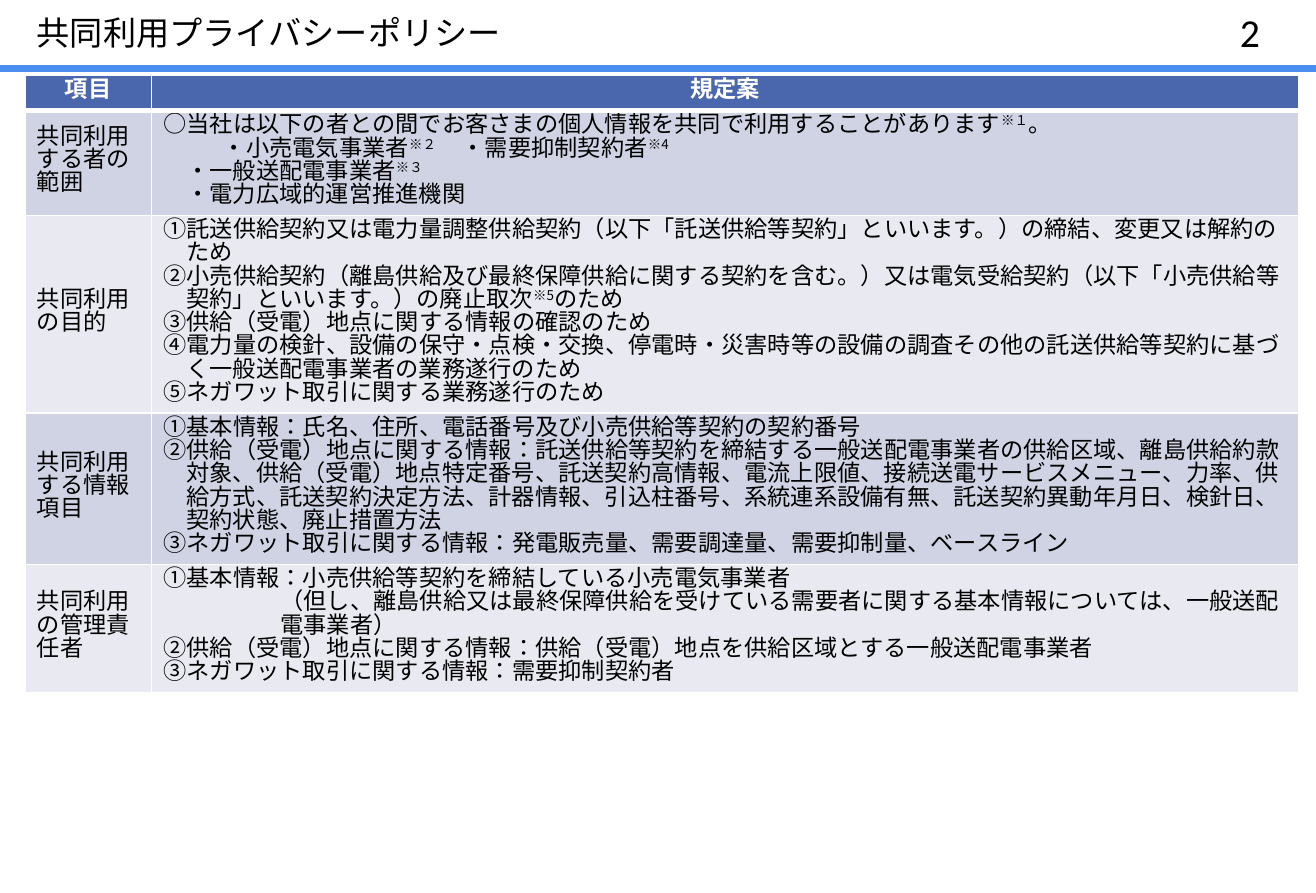
from lxml import etree
from pptx import Presentation
from pptx.dml.color import RGBColor
from pptx.enum.lang import MSO_LANGUAGE_ID
from pptx.enum.shapes import MSO_CONNECTOR, MSO_SHAPE
from pptx.enum.text import MSO_ANCHOR, PP_ALIGN
from pptx.oxml.ns import qn
from pptx.util import Cm, Pt

COLORS = {"rule": "4A8EF2", "header": "4A66AC", "odd": "D0D3E3",
          "even": "E9EAF1", "white": "FFFFFF", "black": "000000"}
JP = "Noto Sans CJK JP"
LINE = 14  # points per text line in the table
HANG = 0.49  # cm, one character


def rgb(name):
    return RGBColor.from_string(COLORS[name])


def write(p, text, size=14, font=JP, color="black", bold=False, align=PP_ALIGN.LEFT,
          spacing=Pt(LINE), left=0, first=0, tabs=()):
    """Fill a paragraph; text between ^ marks is superscript."""
    pPr = p._p.get_or_add_pPr()
    pPr.set("marL", str(Cm(left)))
    pPr.set("indent", str(Cm(first)))
    if tabs:
        tab_list = etree.SubElement(pPr, qn("a:tabLst"))
        for pos in tabs:
            etree.SubElement(tab_list, qn("a:tab"), pos=str(Cm(pos)), algn="l")
    p.alignment = align
    p.line_spacing = spacing
    for i, part in enumerate(text.split("^")):
        if not part:
            continue
        r = p.add_run()
        r.text = part
        r.font.size, r.font.bold, r.font.name = Pt(size), bold, font
        r.font.color.rgb = rgb(color)
        r.font.language_id = MSO_LANGUAGE_ID.JAPANESE
        rPr = r.font._element
        etree.SubElement(rPr, qn("a:ea"), typeface=font)
        if i % 2:
            rPr.set("baseline", "30000")


prs = Presentation()
prs.slide_width, prs.slide_height = Cm(28), Cm(19)
s = prs.slides.add_slide(prs.slide_layouts[6])

# Rule under the title
rule = s.shapes.add_connector(MSO_CONNECTOR.STRAIGHT, 0, Cm(1.45), Cm(28), Cm(1.45))
rule.line.color.rgb = rgb("rule")
rule.line.width = Pt(4.25)
etree.SubElement(rule._element.spPr, qn("a:effectLst"))

# Page number
sp = s.shapes.add_shape(MSO_SHAPE.RECTANGLE, Cm(25.25), Cm(0.03), Cm(2.69), Cm(1.3))
sp.shadow.inherit = False
sp.fill.background()
sp.line.color.rgb = rgb("white")
sp.line.width = Pt(0.5)
sp.text_frame.vertical_anchor = MSO_ANCHOR.MIDDLE
write(sp.text_frame.paragraphs[0], "2", size=23.9, font="Calibri",
      align=PP_ALIGN.CENTER, spacing=1.0)

# Title
tf = s.shapes.add_textbox(Cm(0.53), Cm(0.03), Cm(24.16), Cm(1.42)).text_frame
tf.word_wrap = True
tf.vertical_anchor = MSO_ANCHOR.MIDDLE
write(tf.paragraphs[0], "共同利用プライバシーポリシー", size=20, spacing=0.9)

# Table content: heading, number of text lines, paragraphs with their format
item = {"left": HANG, "first": -HANG}
bullet = {"left": HANG}
rows = [
    ("共同利用する者の範囲", 4, [
        ("○当社は以下の者との間でお客さまの個人情報を共同で利用することがあります^※１^。", {}),
        ("\t・小売電気事業者^※２^\t・需要抑制契約者^※4^", {"tabs": (HANG, 6.75)}),
        ("・一般送配電事業者^※３^", bullet),
        ("・電力広域的運営推進機関", bullet)]),
    ("共同利用の目的", 8, [
        ("①託送供給契約又は電力量調整供給契約（以下「託送供給等契約」といいます。）"
         "の締結、変更又は解約のため", item),
        ("②小売供給契約（離島供給及び最終保障供給に関する契約を含む。）又は電気受給契約"
         "（以下「小売供給等契約」といいます。）の廃止取次^※5^のため", item),
        ("③供給（受電）地点に関する情報の確認のため", item),
        ("④電力量の検針、設備の保守・点検・交換、停電時・災害時等の設備の調査その他の"
         "託送供給等契約に基づく一般送配電事業者の業務遂行のため", item),
        ("⑤ネガワット取引に関する業務遂行のため", item)]),
    ("共同利用する情報項目", 6, [
        ("①基本情報：氏名、住所、電話番号及び小売供給等契約の契約番号", item),
        ("②供給（受電）地点に関する情報：託送供給等契約を締結する一般送配電事業者の供給区域、"
         "離島供給約款対象、供給（受電）地点特定番号、託送契約高情報、電流上限値、"
         "接続送電サービスメニュー、力率、供給方式、託送契約決定方法、計器情報、引込柱番号、"
         "系統連系設備有無、託送契約異動年月日、検針日、契約状態、廃止措置方法", item),
        ("③ネガワット取引に関する情報：発電販売量、需要調達量、需要抑制量、ベースライン", item)]),
    ("共同利用の管理責任者", 5, [
        ("①基本情報：小売供給等契約を締結している小売電気事業者", item),
        ("（但し、離島供給又は最終保障供給を受けている需要者に関する基本情報については、"
         "一般送配電事業者）", {"left": 2.49}),
        ("②供給（受電）地点に関する情報：供給（受電）地点を供給区域とする一般送配電事業者", item),
        ("③ネガワット取引に関する情報：需要抑制契約者", item)]),
]
head = {"color": "white", "bold": True, "align": PP_ALIGN.CENTER}
grid = [(1, [("項目", head)], [("規定案", head)])]
grid += [(lines, [(name, {})], paras) for name, lines, paras in rows]

# Table
table = s.shapes.add_table(len(grid), 2, Cm(0.53), Cm(1.6), Cm(27.1), Cm(13.1)).table
table.columns[0].width, table.columns[1].width = Cm(2.69), Cm(24.41)
for n, (lines, *cells) in enumerate(grid):
    table.rows[n].height = Pt(lines * LINE) + Cm(0.25)
    fill = "header" if n == 0 else "odd" if n % 2 else "even"
    for cell, paras in zip(table.rows[n].cells, cells):
        cell.vertical_anchor = MSO_ANCHOR.MIDDLE if n else MSO_ANCHOR.TOP
        tf = cell.text_frame
        for i, (text, fmt) in enumerate(paras):
            write(tf.add_paragraph() if i else tf.paragraphs[0], text, **fmt)
        # White borders, thicker between the header and the body
        tcPr = cell._tc.get_or_add_tcPr()
        for side in ("lnL", "lnR", "lnT", "lnB"):
            thick = (n, side) in ((0, "lnB"), (1, "lnT"))
            ln = etree.SubElement(tcPr, qn(f"a:{side}"), w=str(Pt(3 if thick else 1)))
            solid = etree.SubElement(ln, qn("a:solidFill"))
            etree.SubElement(solid, qn("a:srgbClr"), val=COLORS["white"])
        cell.fill.solid()
        cell.fill.fore_color.rgb = rgb(fill)

prs.save("out.pptx")
